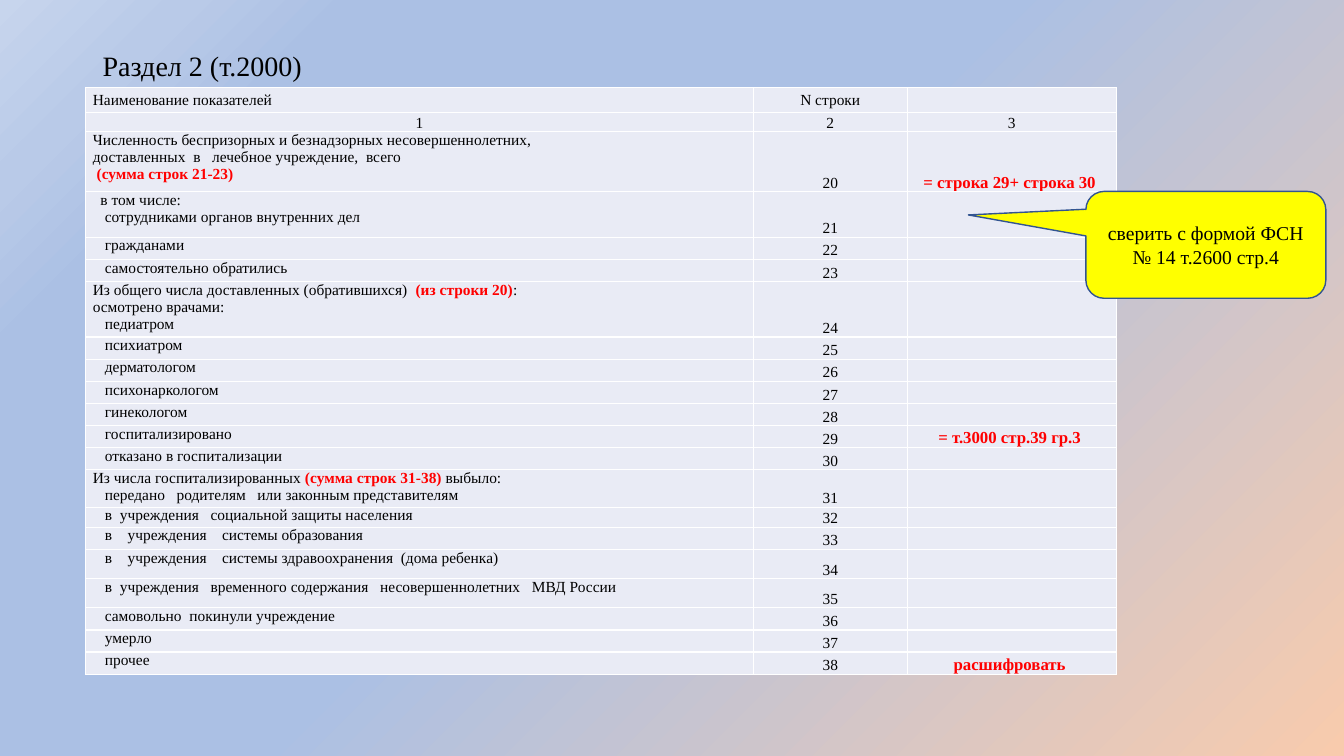
from collections import namedtuple

from lxml.etree import SubElement
from pptx import Presentation
from pptx.dml.color import RGBColor
from pptx.enum.shapes import MSO_SHAPE as Shape
from pptx.enum.text import MSO_ANCHOR as Anchor, PP_ALIGN as Align
from pptx.oxml.ns import qn
from pptx.util import Inches, Pt

Box = namedtuple("Box", "left top width height")
Row = namedtuple("Row", "height name number note", defaults=("",))

THEME = {
    "font": "Times New Roman",
    "title_size": 20, "callout_size": 14, "note_size": 12, "cell_size": 11,
    "text": "000000", "accent": "FF0000",
    "cell": "E9EBF5", "border": "FFFFFF",
    "callout": "FFFF00", "callout_line": "325491",
    "background": [(0, "F8CBAD"), (52, "ABC0E4"), (83, "ABC0E4"),
                   (91, "B9CAE8"), (100, "C7D5ED")],
}

SLIDE_WIDTH, SLIDE_HEIGHT = Inches(13.33), Inches(7.5)
CELL_MARGINS = {"margin_left": Inches(0.07), "margin_right": Inches(0.07),
                "margin_top": 0, "margin_bottom": 0}
FIRST_LINE_INDENT = Inches(0.12)
COLUMN_WEIGHTS = (6.62, 1.53, 2.07)

# In a name, ">" opens an indented line and "*" encloses accented words.
ROWS = [
    Row(0.25, "Наименование показателей", "N строки"),
    Row(0.18, "1", "2", "3"),
    Row(0.6, "Численность беспризорных и безнадзорных несовершеннолетних,\n"
             "доставленных  в   лечебное учреждение,  всего\n"
             "* (сумма строк 21-23)*", "20", "*= строка 29+ строка 30 *"),
    Row(0.45, "  в том числе:\n>сотрудниками органов внутренних дел", "21"),
    Row(0.22, ">гражданами", "22"),
    Row(0.22, ">самостоятельно обратились", "23"),
    Row(0.55, "Из общего числа доставленных (обратившихся)  *(из строки 20)*:\n"
              "осмотрено врачами:\n>педиатром", "24"),
    Row(0.22, ">психиатром", "25"),
    Row(0.22, ">дерматологом", "26"),
    Row(0.22, ">психонаркологом", "27"),
    Row(0.22, ">гинекологом", "28"),
    Row(0.22, ">госпитализировано", "29", "*= т.3000 стр.39 гр.3 *"),
    Row(0.22, ">отказано в госпитализации", "30"),
    Row(0.37, "Из числа госпитализированных *(сумма строк 31-38) *выбыло:\n"
              ">передано   родителям   или законным представителям", "31"),
    Row(0.2, ">в  учреждения   социальной защиты населения", "32"),
    Row(0.22, ">в    учреждения    системы образования", "33"),
    Row(0.29, ">в    учреждения    системы здравоохранения  (дома ребенка)", "34"),
    Row(0.29, ">в  учреждения   временного содержания   несовершеннолетних"
              "   МВД России", "35"),
    Row(0.22, ">самовольно  покинули учреждение", "36"),
    Row(0.22, ">умерло", "37"),
    Row(0.22, ">прочее", "38", "*расшифровать *"),
]


def percent_box(left, top, width, height):
    """Turn percentages of the slide's size into a box of lengths."""
    return Box(int(SLIDE_WIDTH * left / 100), int(SLIDE_HEIGHT * top / 100),
               int(SLIDE_WIDTH * width / 100), int(SLIDE_HEIGHT * height / 100))


def set_format(target, values):
    for name, value in values.items():
        setattr(target, name, value)


def add_run(paragraph, text, size, color="text", bold=False):
    run = paragraph.add_run()
    run.text = text
    set_format(run.font, {"name": THEME["font"], "size": Pt(size), "bold": bold})
    run.font.color.rgb = RGBColor.from_string(THEME[color])


def paint_background(slide):
    fill = slide.background.fill
    fill.gradient()
    fill.gradient_angle = 135
    stops = slide.element.find(".//" + qn("a:gsLst"))
    for stop in list(stops):
        stops.remove(stop)
    for position, color in THEME["background"]:
        stop = SubElement(stops, qn("a:gs"), pos=str(position * 1000))
        SubElement(stop, qn("a:srgbClr"), val=color)


def add_title(slide, box, text):
    frame = slide.shapes.add_textbox(*box).text_frame
    set_format(frame, {"word_wrap": True, "vertical_anchor": Anchor.MIDDLE})
    frame.paragraphs[0].line_spacing = 0.9
    add_run(frame.paragraphs[0], text, THEME["title_size"])


def style_cell(cell, anchor):
    set_format(cell, {**CELL_MARGINS, "vertical_anchor": anchor})
    properties = cell._tc.get_or_add_tcPr()
    for side in ("lnL", "lnR", "lnT", "lnB"):
        line = SubElement(properties, qn("a:" + side), w=str(Pt(1)))
        SubElement(SubElement(line, qn("a:solidFill")), qn("a:srgbClr"),
                   val=THEME["border"])
    cell.fill.solid()
    cell.fill.fore_color.rgb = RGBColor.from_string(THEME["cell"])


def write_cell(cell, text, align, accent_size):
    frame = cell.text_frame
    for index, line in enumerate(text.split("\n")):
        paragraph = frame.add_paragraph() if index else frame.paragraphs[0]
        paragraph.alignment = align
        if line.startswith(">"):
            paragraph._p.get_or_add_pPr().set("indent", str(FIRST_LINE_INDENT))
        for part, words in enumerate(line.lstrip(">").split("*")):
            if words and part % 2:
                add_run(paragraph, words, accent_size, "accent", True)
            elif words:
                add_run(paragraph, words, THEME["cell_size"])
        if not line:
            paragraph._p.get_or_add_endParaRPr().set(
                "sz", str(THEME["cell_size"] * 100))


def add_indicator_table(slide, box, rows):
    table = slide.shapes.add_table(len(rows), len(COLUMN_WEIGHTS), *box).table
    set_format(table, {"first_row": False, "horz_banding": False})
    for column, weight in zip(table.columns, COLUMN_WEIGHTS):
        column.width = int(box.width * weight / sum(COLUMN_WEIGHTS))
    total_height = sum(row.height for row in rows)
    for index, row in enumerate(rows):
        table.rows[index].height = int(box.height * row.height / total_height)
        name_align = {0: Align.JUSTIFY, 1: Align.CENTER}.get(index, Align.LEFT)
        name_anchor = {0: Anchor.MIDDLE, 1: Anchor.BOTTOM}.get(index, Anchor.TOP)
        value_anchor = Anchor.BOTTOM if index else Anchor.MIDDLE
        cells = [
            (row.name, name_align, name_anchor, THEME["cell_size"]),
            (row.number, Align.CENTER, value_anchor, THEME["cell_size"]),
            (row.note, Align.CENTER, value_anchor, THEME["note_size"]),
        ]
        for column, (text, align, anchor, accent_size) in enumerate(cells):
            cell = table.cell(index, column)
            style_cell(cell, anchor)
            write_cell(cell, text, align, accent_size)


def add_callout(slide, box, text):
    callout = slide.shapes.add_shape(Shape.ROUNDED_RECTANGULAR_CALLOUT, *box)
    for index, value in enumerate((-0.99, -0.28, 0.17)):
        callout.adjustments[index] = value
    callout.shadow.inherit = False
    callout.fill.solid()
    callout.fill.fore_color.rgb = RGBColor.from_string(THEME["callout"])
    callout.line.color.rgb = RGBColor.from_string(THEME["callout_line"])
    callout.line.width = Pt(1)
    frame = callout.text_frame
    set_format(frame, {"word_wrap": True, "vertical_anchor": Anchor.MIDDLE})
    frame.paragraphs[0].alignment = Align.CENTER
    add_run(frame.paragraphs[0], text, THEME["callout_size"])


def main():
    presentation = Presentation()
    set_format(presentation, {"slide_width": SLIDE_WIDTH,
                              "slide_height": SLIDE_HEIGHT})
    slide = presentation.slides.add_slide(presentation.slide_layouts[6])
    paint_background(slide)
    add_title(slide, percent_box(6.9, 5.33, 86.27, 7.2), "Раздел 2 (т.2000)")
    add_indicator_table(slide, percent_box(6.38, 11.6, 76.67, 77.6), ROWS)
    add_callout(slide, percent_box(80.8, 25.33, 17.85, 14.13),
                "сверить с формой ФСН № 14 т.2600 стр.4")
    presentation.save("out.pptx")


if __name__ == "__main__":
    main()
